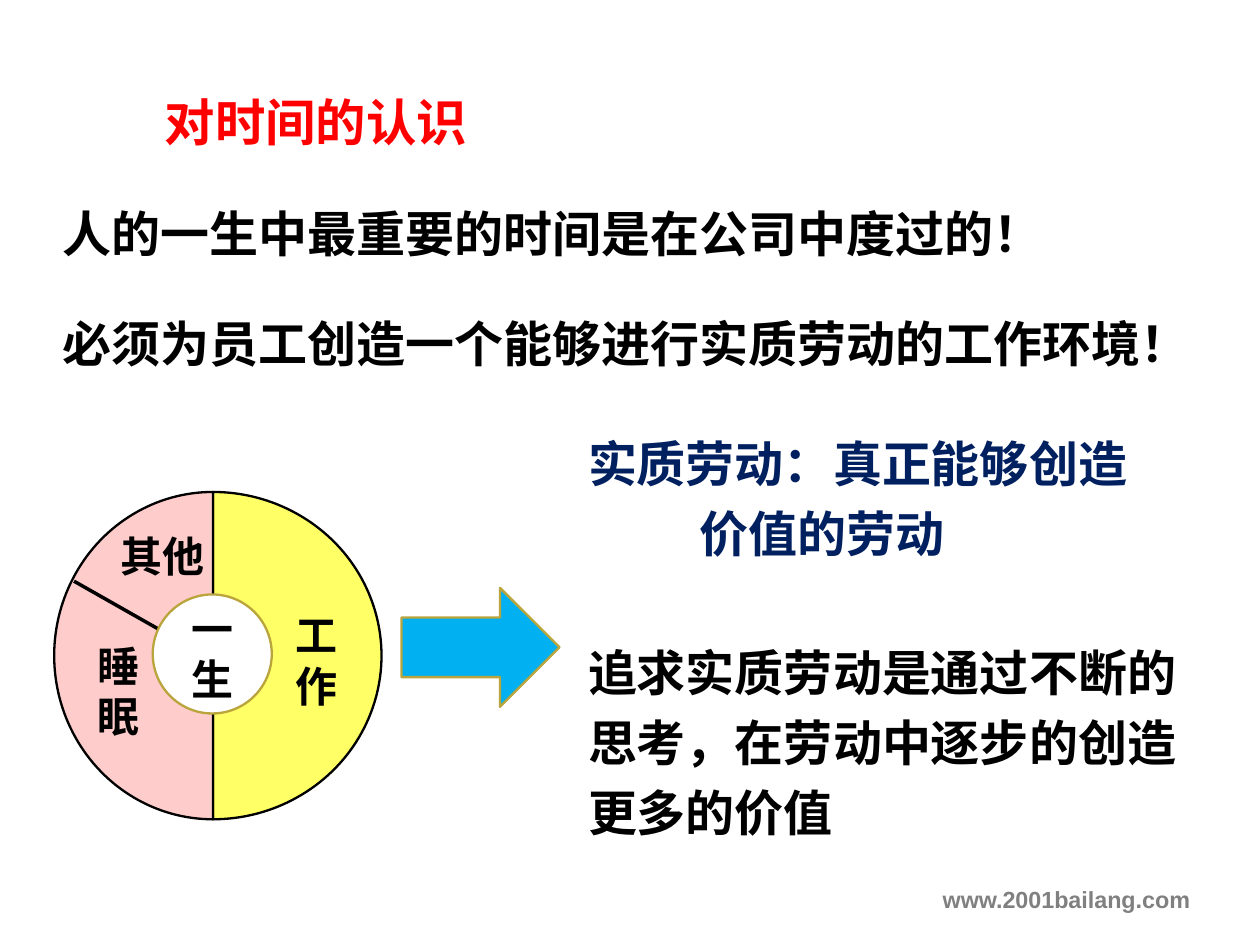
from lxml import etree
from pptx import Presentation
from pptx.dml.color import RGBColor
from pptx.enum.shapes import MSO_CONNECTOR, MSO_SHAPE
from pptx.enum.text import MSO_ANCHOR, MSO_AUTO_SIZE, PP_ALIGN
from pptx.oxml.ns import qn
from pptx.util import Cm, Pt

LINE = MSO_CONNECTOR.STRAIGHT
ARROW, OVAL, PIE = MSO_SHAPE.RIGHT_ARROW, MSO_SHAPE.OVAL, MSO_SHAPE.PIE
TOP, MIDDLE = MSO_ANCHOR.TOP, MSO_ANCHOR.MIDDLE
LEFT, CENTER, RIGHT = PP_ALIGN.LEFT, PP_ALIGN.CENTER, PP_ALIGN.RIGHT
FIXED = MSO_AUTO_SIZE.NONE
CJK = "Noto Sans CJK SC"
COLORS = {
    "black": "000000", "white": "FFFFFF", "red": "FF0000", "navy": "002060",
    "gray": "808080", "blue": "00B0F0", "gold": "BAA53D",
    "yellow": "FFFF66", "pink": "FFCCCC",
}
DEGREE = 0.6


def color(name):
    """Return a named colour."""
    return RGBColor.from_string(COLORS[name])


def place(shape, left, top, width, height):
    """Move and size a shape in centimetres."""
    shape.left, shape.top = Cm(left), Cm(top)
    shape.width, shape.height = Cm(width), Cm(height)


def setup(shape, anchor=TOP, side=0.25, edge=0.13, wrap=True):
    """Set the frame of a text shape and return it."""
    frame = shape.text_frame
    frame.auto_size = FIXED
    frame.word_wrap = wrap
    frame.vertical_anchor = anchor
    frame.margin_left = frame.margin_right = Cm(side)
    frame.margin_top = frame.margin_bottom = Cm(edge)
    return frame


def write(frame, lines, size, align=LEFT, font=CJK, pitch=None):
    """Write lines of (text, colour, space before, indent) as bold text."""
    for index, (text, tint, gap, indent) in enumerate(lines):
        para = frame.paragraphs[0] if index == 0 else frame.add_paragraph()
        props = para._p.get_or_add_pPr()
        props.set("marL", "0")
        props.set("indent", str(Cm(indent)))
        etree.SubElement(props, qn("a:buNone"))
        para.alignment = align
        para.space_before = Pt(gap)
        para.space_after = Pt(0)
        if pitch:
            para.line_spacing = Pt(pitch)
        run = para.add_run()
        run.text = text
        run.font.size = Pt(size)
        run.font.bold = True
        run.font.name = font
        run.font.color.rgb = color(tint)
        east = etree.SubElement(run._r.get_or_add_rPr(), qn("a:ea"))
        east.set("typeface", font)


def label(slide, text, box, side=0.2, wrap=True):
    """Add a short black label."""
    shape = slide.shapes.add_textbox(*map(Cm, box))
    write(setup(shape, side=side, wrap=wrap), [(text, "black", 0, 0)], 18)


def form(slide, kind, box, fill, edge):
    """Add a filled preset shape with a thin edge."""
    shape = slide.shapes.add_shape(kind, *map(Cm, box))
    shape.shadow.inherit = False
    shape.fill.solid()
    shape.fill.fore_color.rgb = color(fill)
    shape.line.color.rgb = color(edge)
    shape.line.width = Pt(1)
    return shape


def half(slide, box, fill, start, end):
    """Add half of the life disc between two angles."""
    shape = form(slide, PIE, box, fill, "black")
    shape.adjustments[0] = start * DEGREE
    shape.adjustments[1] = end * DEGREE


def rule(slide, ends, width):
    """Add a straight black line."""
    line = slide.shapes.add_connector(LINE, *map(Cm, ends))
    line.line.color.rgb = color("black")
    line.line.width = Pt(width)
    etree.SubElement(line._element.spPr, qn("a:effectLst"))


def prose(slide):
    """Fill the title, both bodies and the footer."""
    title, lead, sense = slide.placeholders
    place(title, 2.31, 1.3, 15.77, 1.07)
    write(setup(title, MIDDLE, 0.18, 0.1),
          [("对时间的认识", "red", 0, 0)], 21.6)
    place(lead, 0.69, 2.95, 17.73, 2.69)
    write(setup(lead), [
        ("人的一生中最重要的时间是在公司中度过的！", "black", 0, 0),
        ("必须为员工创造一个能够进行实质劳动的工作环境！", "black", 22, 0),
    ], 21)
    place(sense, 8.64, 6.25, 9.6, 6.65)
    write(setup(sense), [
        ("实质劳动：真正能够创造", "navy", 0, 0),
        ("价值的劳动", "navy", 0, 1.68),
        ("追求实质劳动是通过不断的思考，在劳动中逐步的创造更多的价值",
         "black", 30, 0),
    ], 21, pitch=30)
    foot = slide.shapes.add_textbox(Cm(0), Cm(13.26), Cm(18.24), Cm(0.66))
    write(setup(foot), [("www.2001bailang.com", "gray", 0, 0)],
          10, RIGHT, "Arial")


def disc(slide):
    """Draw the disc of a lifetime with its parts."""
    half(slide, (0.67, 7.44, 5.1, 4.95), "yellow", 270, 90)
    half(slide, (0.82, 7.44, 4.8, 4.95), "pink", 90, 270)
    rule(slide, (3.22, 7.44, 3.22, 12.39), 1)
    rule(slide, (1.12, 8.79, 3.22, 9.98), 1.5)
    label(slide, "睡眠", (1.27, 9.55, 1.19, 1.73))
    label(slide, "工作", (4.27, 9.09, 1.04, 1.73))
    hub = form(slide, OVAL, (2.31, 8.99, 1.8, 1.8), "white", "gold")
    write(setup(hub, MIDDLE), [("一生", "black", 0, 0)], 18, CENTER)
    label(slide, "其他", (1.57, 7.9, 1.8, 1.02), 0.25, False)


def main():
    """Build the slide and save it."""
    deck = Presentation()
    deck.slide_width, deck.slide_height = Cm(19.05), Cm(14.29)
    slide = deck.slides.add_slide(deck.slide_layouts[3])
    prose(slide)
    form(slide, ARROW, (6.07, 8.89, 2.39, 1.8), "blue", "gold")
    disc(slide)
    deck.save("out.pptx")


if __name__ == "__main__":
    main()
